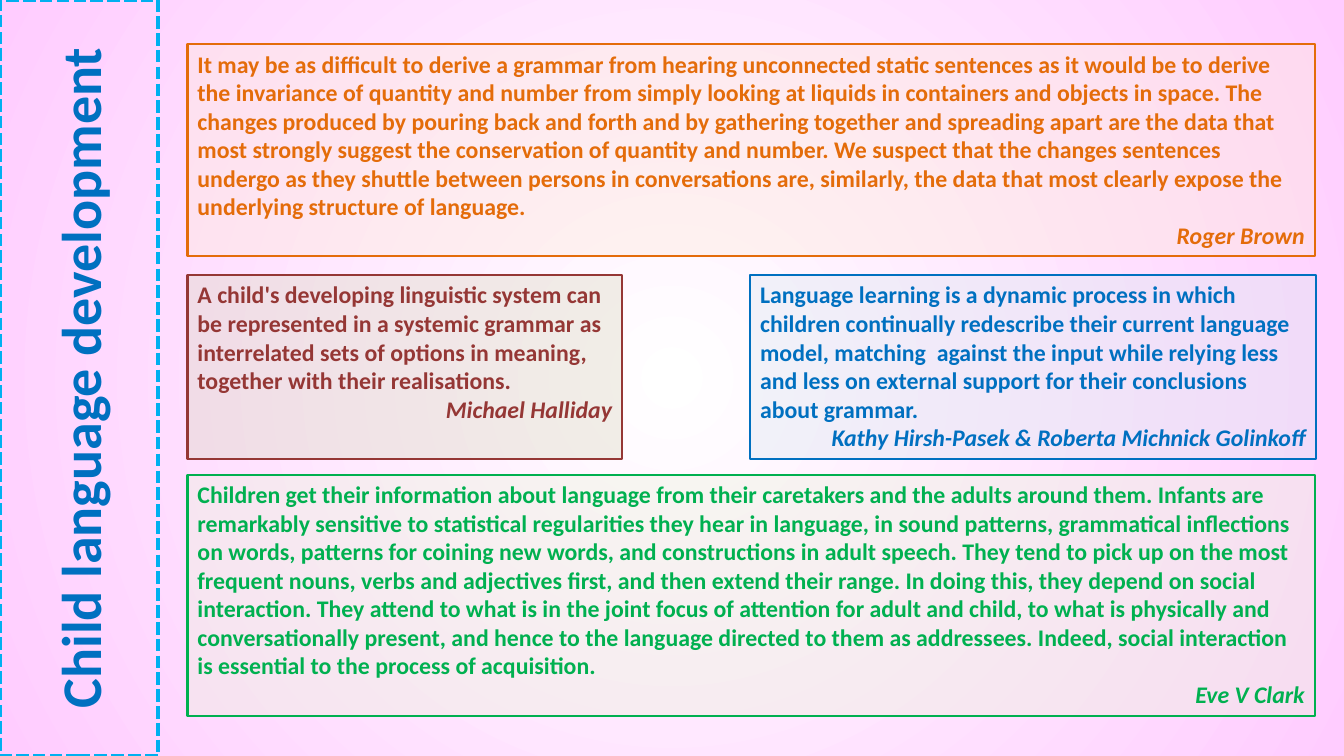
import pptx
import pptx.util
import pptx.dml.color
import pptx.enum.dml
import pptx.enum.shapes
import pptx.enum.text
import pptx.oxml
import pptx.oxml.ns

Inches = pptx.util.Inches
Pt = pptx.util.Pt
RGBColor = pptx.dml.color.RGBColor
PP_ALIGN = pptx.enum.text.PP_ALIGN
MSO_ANCHOR = pptx.enum.text.MSO_ANCHOR
qn = pptx.oxml.ns.qn

FONT = "Calibri"
WHITE = RGBColor(0xFF, 0xFF, 0xFF)
PINK = RGBColor(0xFF, 0xCC, 0xFF)
CYAN = RGBColor(0x00, 0xB0, 0xF0)
BLUE = RGBColor(0x00, 0x70, 0xC0)
PALE_BLUE = RGBColor(0xDC, 0xE6, 0xF2)
ORANGE = RGBColor(0xE4, 0x6C, 0x0A)
PALE_ORANGE = RGBColor(0xFD, 0xEA, 0xDA)
MAROON = RGBColor(0x95, 0x37, 0x35)
TAN = RGBColor(0xDD, 0xD9, 0xC3)
GREEN = RGBColor(0x00, 0xB0, 0x50)
PALE_GREEN = RGBColor(0xEB, 0xF1, 0xDE)

LEFT, FULL_WIDTH = 1.86, 11.18
MIDDLE_TOP, MIDDLE_HEIGHT = 2.73, 1.82

# Each quotation: text, author, position and size, text colour, fill colour
QUOTES = [
    ("A child's developing linguistic system can be represented in a systemic "
     "grammar as interrelated sets of options in meaning, together with their "
     "realisations.",
     "Michael Halliday",
     (LEFT, MIDDLE_TOP, 4.31, MIDDLE_HEIGHT), MAROON, TAN),
    ("Children get their information about language from their caretakers and "
     "the adults around them. Infants are remarkably sensitive to statistical "
     "regularities they hear in language, in sound patterns, grammatical "
     "inflections on words, patterns for coining new words, and constructions "
     "in adult speech. They tend to pick up on the most frequent nouns, verbs "
     "and adjectives first, and then extend their range. In doing this, they "
     "depend on social interaction. They attend to what is in the joint focus "
     "of attention for adult and child, to what is physically and "
     "conversationally present, and hence to the language directed to them as "
     "addressees. Indeed, social interaction is essential to the process of "
     "acquisition.",
     "Eve V Clark",
     (LEFT, 4.71, FULL_WIDTH, 2.39), GREEN, PALE_GREEN),
    ("It may be as difficult to derive a grammar from hearing unconnected "
     "static sentences as it would be to derive the invariance of quantity and "
     "number from simply looking at liquids in containers and objects in "
     "space. The changes produced by pouring back and forth and by gathering "
     "together and spreading apart are the data that most strongly suggest the "
     "conservation of quantity and number. We suspect that the changes "
     "sentences undergo as they shuttle between persons in conversations are, "
     "similarly, the data that most clearly expose the underlying structure "
     "of language.",
     "Roger Brown",
     (LEFT, 0.44, FULL_WIDTH, 2.1), ORANGE, PALE_ORANGE),
    ("Language learning is a dynamic process in which children continually "
     "redescribe their current language model, matching  against the input "
     "while relying less and less on external support for their conclusions "
     "about grammar.",
     "Kathy Hirsh-Pasek & Roberta Michnick Golinkoff",
     (7.44, MIDDLE_TOP, 5.61, MIDDLE_HEIGHT), BLUE, PALE_BLUE),
]


def add_run(paragraph, text, size, color, italic=False):
    run = paragraph.add_run()
    run.text = text
    run.font.name = FONT
    run.font.size = Pt(size)
    run.font.bold = True
    run.font.italic = italic
    run.font.color.rgb = color


def add_box(slide, box, line_color, line_width):
    shape = slide.shapes.add_shape(
        pptx.enum.shapes.MSO_SHAPE.RECTANGLE, *(Inches(length) for length in box))
    shape.shadow.inherit = False
    shape.line.color.rgb = line_color
    shape.line.width = Pt(line_width)
    shape.text_frame.word_wrap = True
    return shape


def set_background(slide):
    fill = slide.background.fill
    fill.gradient()
    for stop, color in zip(fill.gradient_stops, (WHITE, PINK)):
        stop.color.rgb = color
    # Radial gradient spreading from the centre of the slide
    gradient = next(slide.element.iter(qn("a:gradFill")))
    radial = pptx.oxml.parse_xml(
        f'<a:path {pptx.oxml.ns.nsdecls("a")} path="circle">'
        '<a:fillToRect l="50000" t="50000" r="50000" b="50000"/></a:path>')
    gradient.replace(gradient.find(qn("a:lin")), radial)


def set_transparent_fill(shape, color, opacity):
    shape.fill.solid()
    shape.fill.fore_color.rgb = color
    color_element = next(shape.element.spPr.iter(qn("a:srgbClr")))
    alpha = color_element.makeelement(qn("a:alpha"), {"val": str(opacity * 1000)})
    color_element.append(alpha)


def add_quote(slide, quote, author, box, color, fill_color):
    shape = add_box(slide, box, color, 1.5)
    set_transparent_fill(shape, fill_color, 40)

    frame = shape.text_frame
    frame.vertical_anchor = MSO_ANCHOR.TOP
    frame.auto_size = pptx.enum.text.MSO_AUTO_SIZE.SHAPE_TO_FIT_TEXT
    frame.paragraphs[0].alignment = PP_ALIGN.LEFT
    add_run(frame.paragraphs[0], quote, 17, color)
    credit = frame.add_paragraph()
    credit.alignment = PP_ALIGN.RIGHT
    add_run(credit, author, 17, color, italic=True)


def add_side_heading(slide, text):
    shape = add_box(slide, (0, 0, 1.57, 7.5), CYAN, 3)
    shape.fill.background()
    shape.line.dash_style = pptx.enum.dml.MSO_LINE.SQUARE_DOT

    frame = shape.text_frame
    frame.vertical_anchor = MSO_ANCHOR.MIDDLE
    # Text reads from bottom to top
    next(shape.element.iter(qn("a:bodyPr"))).set("vert", "vert270")
    frame.paragraphs[0].alignment = PP_ALIGN.CENTER
    add_run(frame.paragraphs[0], text, 40, BLUE)


def main():
    presentation = pptx.Presentation()
    presentation.slide_width = Inches(13.33)
    presentation.slide_height = Inches(7.5)
    # Blank layout: the heading is a vertical box at the side
    slide = presentation.slides.add_slide(presentation.slide_layouts[6])

    set_background(slide)
    for quote in QUOTES:
        add_quote(slide, *quote)
    add_side_heading(slide, "Child language development")

    presentation.save("out.pptx")


if __name__ == "__main__":
    main()
